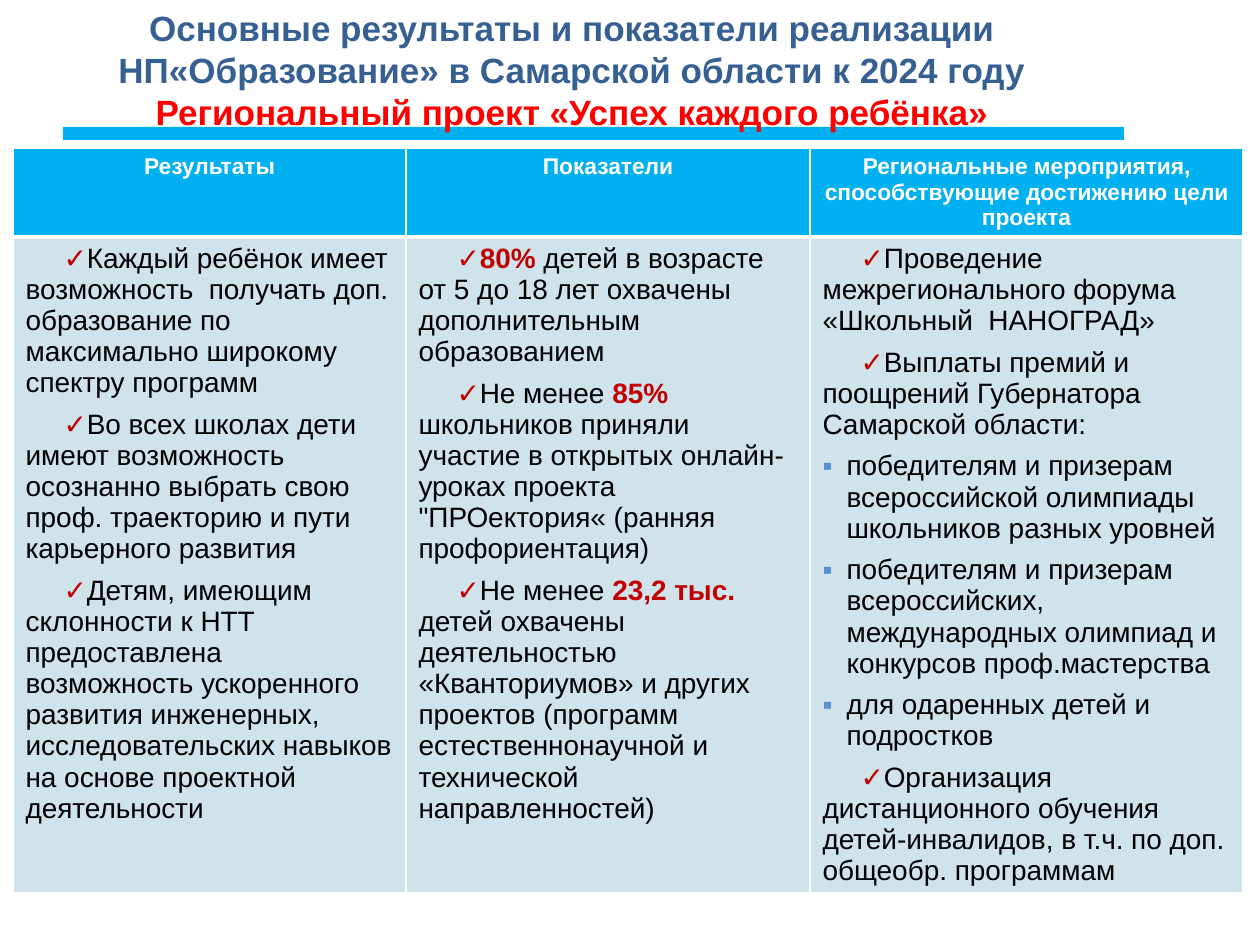
from dataclasses import dataclass

from lxml import etree
from pptx import Presentation
from pptx.dml.color import RGBColor
from pptx.enum.shapes import MSO_SHAPE
from pptx.enum.text import MSO_ANCHOR, PP_ALIGN
from pptx.oxml.ns import qn
from pptx.util import Emu, Inches, Pt

RECTANGLE = MSO_SHAPE.RECTANGLE
CENTER, LEFT = PP_ALIGN.CENTER, PP_ALIGN.LEFT
TOP = MSO_ANCHOR.TOP
SCALE = Inches(1) / 126


@dataclass(frozen=True)
class Theme:
    font: str = "Arial"
    title_size: int = 20
    header_size: int = 13
    body_size: int = 16
    title: str = "376092"
    project: str = "FF0000"
    header: str = "00B0F0"
    body: str = "D0E3EA"
    white: str = "FFFFFF"
    text: str = "000000"
    accent: str = "C00000"
    square: str = "558ED5"
    thin: int = 1
    thick: int = 3
    gap: int = 6


@dataclass(frozen=True)
class Bullet:
    char: str
    color: str
    margin: int
    indent: int


@dataclass(frozen=True)
class Point:
    bullet: Bullet
    phrases: tuple[str, ...]  # plain and highlighted phrases take turns


@dataclass(frozen=True)
class Column:
    heading: str
    width: int
    points: tuple[Point, ...]


THEME = Theme()
CHECK = Bullet("✓", THEME.accent, 0, 38)
SQUARE = Bullet("▪", THEME.square, 24, -24)


def check(*phrases: str) -> Point:
    return Point(CHECK, phrases)


def square(*phrases: str) -> Point:
    return Point(SQUARE, phrases)


TITLE = (
    ("Основные результаты и показатели реализации НП«Образование» "
     "в Самарской области к 2024 году", THEME.title),
    ("Региональный проект «Успех каждого ребёнка»", THEME.project),
)
COLUMNS = (
    Column("Результаты", 393, (
        check("Каждый ребёнок имеет возможность  получать доп. образование по "
              "максимально широкому спектру программ"),
        check("Во всех школах дети имеют возможность осознанно выбрать свою проф. "
              "траекторию и пути карьерного развития"),
        check("Детям, имеющим склонности к НТТ предоставлена возможность ускоренного "
              "развития инженерных, исследовательских навыков на основе проектной "
              "деятельности"),
    )),
    Column("Показатели", 404, (
        check("", "80% ", "детей в возрасте от 5 до 18 лет охвачены дополнительным "
              "образованием"),
        check("Не менее ", "85% ", "школьников приняли участие в открытых "
              "онлайн-уроках проекта \"ПРОектория« (ранняя профориентация)"),
        check("Не менее ", "23,2 тыс. ", "детей охвачены деятельностью "
              "«Кванториумов» и других проектов (программ естественнонаучной и "
              "технической направленностей)"),
    )),
    Column("Региональные мероприятия, способствующие достижению цели проекта", 433, (
        check("Проведение межрегионального форума «Школьный  НАНОГРАД»"),
        check("Выплаты премий и поощрений Губернатора Самарской области:"),
        square("победителям и призерам всероссийской олимпиады школьников разных "
               "уровней"),
        square("победителям и призерам всероссийских, международных олимпиад и "
               "конкурсов проф.мастерства"),
        square("для одаренных детей и подростков"),
        check("Организация дистанционного обучения детей-инвалидов, в т.ч. по доп. "
              "общеобр. программам"),
    )),
)
ROW_HEIGHTS = (88, 656)


def px(length: int) -> Emu:
    return Emu(round(length * SCALE))


def box(*lengths: int) -> list[Emu]:
    return [px(length) for length in lengths]


def add_run(paragraph, text: str, size: int, color: str, bold: bool) -> None:
    run = paragraph.add_run()
    run.text = text
    formats = {"name": THEME.font, "size": Pt(size), "bold": bold}
    for attribute, value in formats.items():
        setattr(run.font, attribute, value)
    run.font.color.rgb = RGBColor.from_string(color)


def next_paragraph(frame, index: int):
    return frame.add_paragraph() if index else frame.paragraphs[0]


def set_bullet(paragraph, bullet: Bullet) -> None:
    properties = paragraph._p.get_or_add_pPr()
    properties.set("marL", str(px(bullet.margin)))
    properties.set("indent", str(px(bullet.indent)))
    color = etree.SubElement(properties, qn("a:buClr"))
    etree.SubElement(color, qn("a:srgbClr"), val=bullet.color)
    etree.SubElement(properties, qn("a:buFont"), typeface=THEME.font)
    etree.SubElement(properties, qn("a:buChar"), char=bullet.char)


def style_cell(cell, fill: str, borders: dict[str, int]) -> None:
    properties = cell._tc.get_or_add_tcPr()
    for side, width in borders.items():
        line = etree.SubElement(properties, qn(f"a:ln{side}"), w=str(Pt(width)))
        solid = etree.SubElement(line, qn("a:solidFill"))
        etree.SubElement(solid, qn("a:srgbClr"), val=THEME.white)
    cell.fill.solid()
    cell.fill.fore_color.rgb = RGBColor.from_string(fill)
    cell.vertical_anchor = TOP


def add_points(frame, points: tuple[Point, ...]) -> None:
    for index, point in enumerate(points):
        paragraph = next_paragraph(frame, index)
        set_bullet(paragraph, point.bullet)
        formats = {"alignment": LEFT, "space_before": Pt(THEME.gap if index else 0)}
        for attribute, value in formats.items():
            setattr(paragraph, attribute, value)
        for order, phrase in enumerate(point.phrases):
            highlighted = order % 2 == 1
            if phrase:
                add_run(paragraph, phrase, THEME.body_size,
                        THEME.accent if highlighted else THEME.text, highlighted)


def add_rule(slide) -> None:
    rule = slide.shapes.add_shape(RECTANGLE, *box(63, 127, 1061, 13))
    rule.shadow.inherit = False
    rule.fill.solid()
    rule.fill.fore_color.rgb = RGBColor.from_string(THEME.header)
    rule.line.fill.background()


def add_results(slide) -> None:
    width = sum(column.width for column in COLUMNS)
    results = slide.shapes.add_table(
        len(ROW_HEIGHTS), len(COLUMNS), *box(13, 148, width, sum(ROW_HEIGHTS))).table
    results.horz_banding = False
    for row, height in zip(results.rows, ROW_HEIGHTS):
        row.height = px(height)
    thin, thick = THEME.thin, THEME.thick
    for index, column in enumerate(COLUMNS):
        results.columns[index].width = px(column.width)
        heading, body = results.cell(0, index), results.cell(1, index)
        style_cell(heading, THEME.header, {"L": thin, "R": thin, "T": thin, "B": thick})
        style_cell(body, THEME.body, {"L": thin, "R": thin, "T": thick, "B": thin})
        paragraph = heading.text_frame.paragraphs[0]
        paragraph.alignment = CENTER
        add_run(paragraph, column.heading, THEME.header_size, THEME.white, True)
        add_points(body.text_frame, column.points)


def add_title(slide) -> None:
    frame = slide.shapes.add_textbox(*box(0, 0, 1144, 135)).text_frame
    for attribute, value in {"word_wrap": True, "vertical_anchor": TOP}.items():
        setattr(frame, attribute, value)
    for index, (text, color) in enumerate(TITLE):
        paragraph = next_paragraph(frame, index)
        paragraph.alignment = CENTER
        add_run(paragraph, text, THEME.title_size, color, True)


def main() -> None:
    deck = Presentation()
    deck.slide_width, deck.slide_height = box(1260, 945)
    slide = deck.slides.add_slide(deck.slide_layouts[6])
    # Rule under the title, table of results, then the title above both
    add_rule(slide)
    add_results(slide)
    add_title(slide)
    deck.save("out.pptx")


if __name__ == "__main__":
    main()
